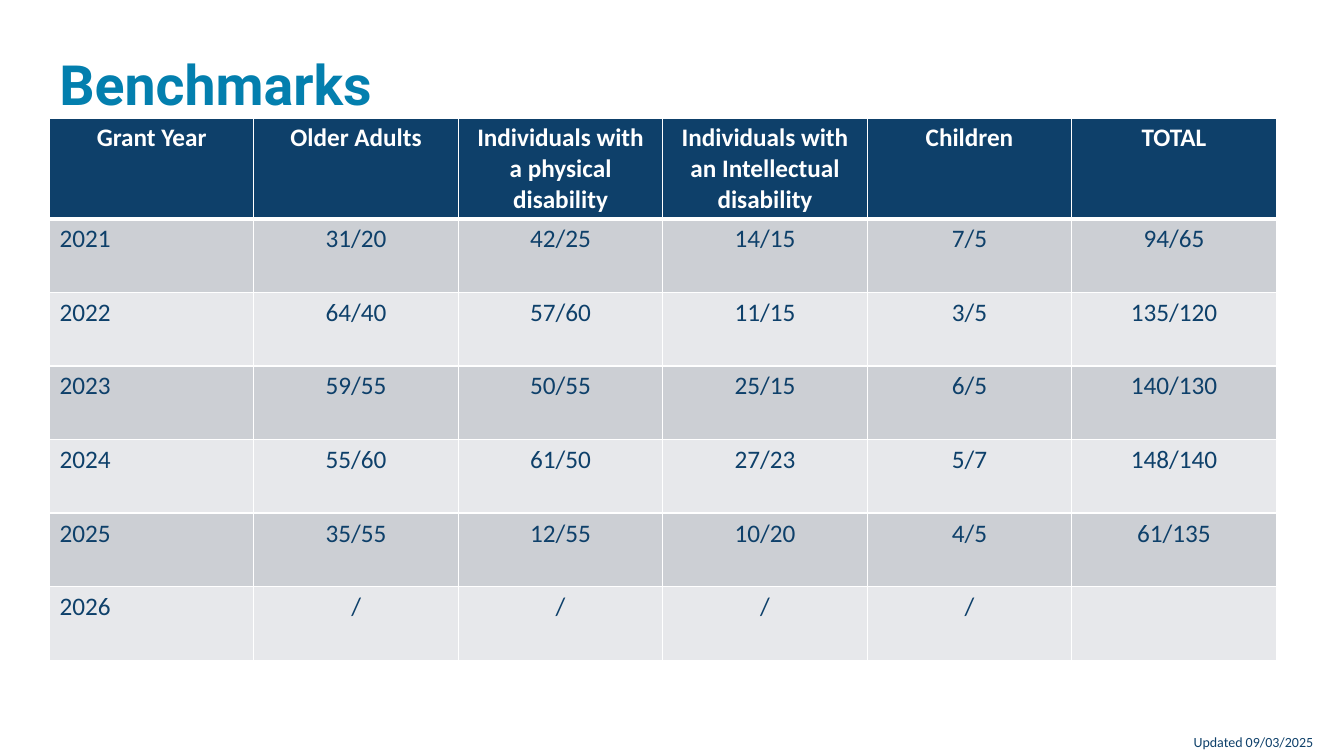
from dataclasses import dataclass

from lxml import etree
from pptx import Presentation
from pptx.dml.color import RGBColor
from pptx.enum.text import MSO_ANCHOR, PP_ALIGN
from pptx.oxml.ns import qn
from pptx.util import Inches, Pt

LEFT, CENTER = PP_ALIGN.LEFT, PP_ALIGN.CENTER
MIDDLE, TOP = MSO_ANCHOR.MIDDLE, MSO_ANCHOR.TOP


@dataclass(frozen=True)
class TextStyle:
    font: str
    size: float
    color: str
    bold: bool = False


@dataclass(frozen=True)
class Theme:
    title: TextStyle = TextStyle("Roboto", 39.6, "037FAE", True)
    header: TextStyle = TextStyle("Calibri", 18, "FFFFFF", True)
    body: TextStyle = TextStyle("Calibri", 18, "0E406A")
    date: TextStyle = TextStyle("Calibri", 10, "0E406A")
    header_fill: str = "0E406A"
    bands: tuple[str, str] = ("CCCFD4", "E7E8EB")
    border: str = "FFFFFF"


@dataclass(frozen=True)
class Label:
    text: str
    left: float
    top: float
    width: float
    height: float
    style: TextStyle
    anchor: MSO_ANCHOR = TOP
    wrap: bool = True
    line_spacing: float = 1.0


THEME = Theme()
LABELS = (
    Label("Benchmarks", 0.49, 0.57, 12.35, 0.6, THEME.title, MIDDLE, line_spacing=0.9),
    Label("Updated 09/03/2025", 11.74, 7.23, 1.41, 0.27, THEME.date, wrap=False),
)
BENCHMARKS = (
    ("Grant Year", "Older Adults", "Individuals with a physical disability",
     "Individuals with an Intellectual disability", "Children", "TOTAL"),
    ("2021", "31/20", "42/25", "14/15", "7/5", "94/65"),
    ("2022", "64/40", "57/60", "11/15", "3/5", "135/120"),
    ("2023", "59/55", "50/55", "25/15", "6/5", "140/130"),
    ("2024", "55/60", "61/50", "27/23", "5/7", "148/140"),
    ("2025", "35/55", "12/55", "10/20", "4/5", "61/135"),
    ("2026", "/", "/", "/", "/", ""),
)
TABLE_LEFT, TABLE_TOP, TABLE_WIDTH = 0.49, 1.17, 12.17
HEADER_HEIGHT, ROW_HEIGHT = 0.99, 0.73


def style_font(font, style: TextStyle) -> None:
    font.name = style.font
    font.size = Pt(style.size)
    font.bold = style.bold
    font.color.rgb = RGBColor.from_string(style.color)


def add_label(slide, label: Label) -> None:
    box = slide.shapes.add_textbox(Inches(label.left), Inches(label.top),
                                   Inches(label.width), Inches(label.height))
    frame = box.text_frame
    frame.word_wrap = label.wrap
    frame.vertical_anchor = label.anchor
    frame.text = label.text
    paragraph = frame.paragraphs[0]
    paragraph.line_spacing = label.line_spacing
    style_font(paragraph.runs[0].font, label.style)


def add_borders(cell, top: float, bottom: float) -> None:
    """Draw the four cell borders; must run before the fill is set."""
    properties = cell._tc.get_or_add_tcPr()
    for side, width in (("L", 1), ("R", 1), ("T", top), ("B", bottom)):
        line = etree.SubElement(properties, qn(f"a:ln{side}"), w=str(Pt(width)))
        fill = etree.SubElement(line, qn("a:solidFill"))
        etree.SubElement(fill, qn("a:srgbClr"), val=THEME.border)


def fill_cell(cell, text: str, row: int, column: int) -> None:
    is_header = row == 0
    add_borders(cell, top=3 if row == 1 else 1, bottom=3 if is_header else 1)
    cell.fill.solid()
    color = THEME.header_fill if is_header else THEME.bands[(row - 1) % 2]
    cell.fill.fore_color.rgb = RGBColor.from_string(color)
    cell.text_frame.text = text
    paragraph = cell.text_frame.paragraphs[0]
    paragraph.alignment = CENTER if is_header or column > 0 else LEFT
    style = THEME.header if is_header else THEME.body
    style_font(paragraph.font, style)
    for run in paragraph.runs:
        style_font(run.font, style)


def add_benchmark_table(slide) -> None:
    row_count, column_count = len(BENCHMARKS), len(BENCHMARKS[0])
    height = HEADER_HEIGHT + ROW_HEIGHT * (row_count - 1)
    table = slide.shapes.add_table(
        row_count, column_count, Inches(TABLE_LEFT), Inches(TABLE_TOP),
        Inches(TABLE_WIDTH), Inches(height)).table
    for column in table.columns:
        column.width = Inches(TABLE_WIDTH / column_count)
    for row, values in enumerate(BENCHMARKS):
        table.rows[row].height = Inches(ROW_HEIGHT if row else HEADER_HEIGHT)
        for column, text in enumerate(values):
            fill_cell(table.cell(row, column), text, row, column)


def main() -> None:
    presentation = Presentation()
    presentation.slide_width = Inches(13.33)
    presentation.slide_height = Inches(7.5)
    slide = presentation.slides.add_slide(presentation.slide_layouts[6])
    title, date = LABELS
    add_label(slide, title)
    add_benchmark_table(slide)
    add_label(slide, date)
    presentation.save("out.pptx")


if __name__ == "__main__":
    main()
